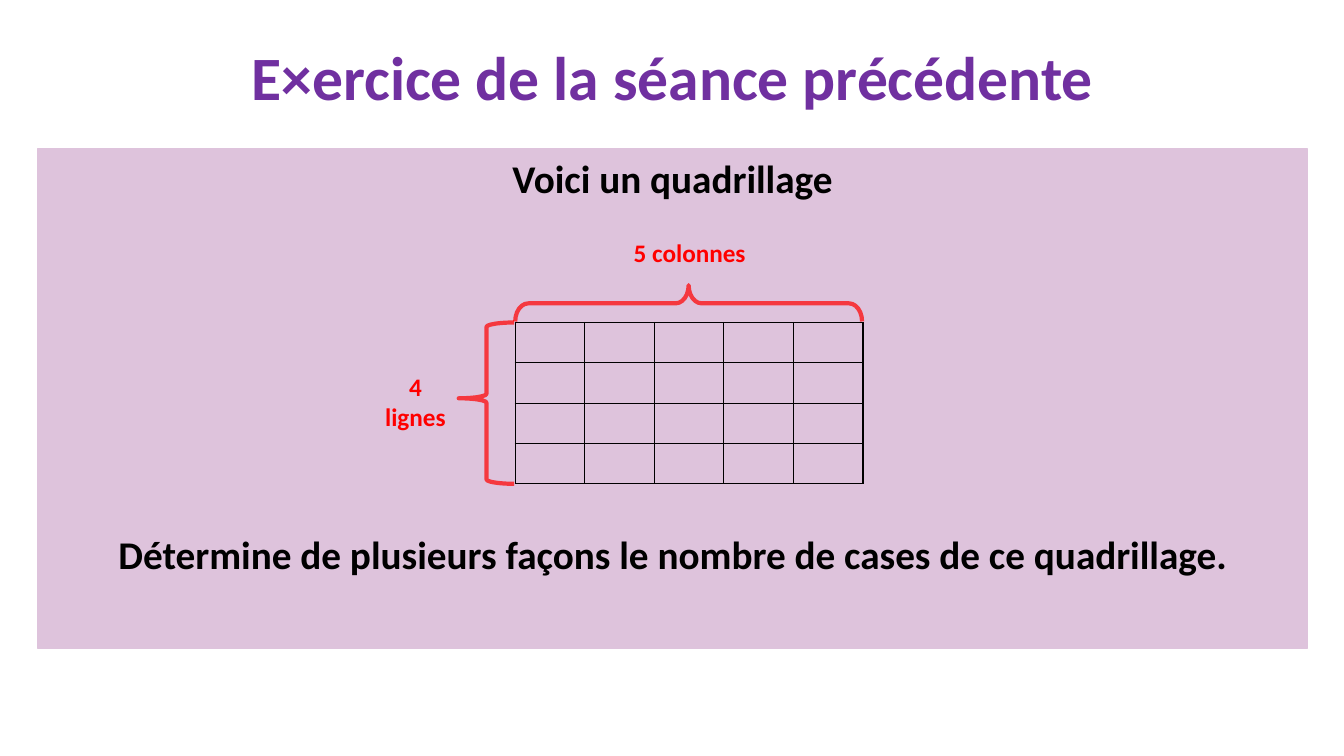
import dataclasses

import pptx
import pptx.dml.color
import pptx.enum.shapes
import pptx.enum.text
import pptx.oxml
import pptx.oxml.ns
import pptx.util

PX = 9144  # EMU in one px, 100 px to the inch
ANCHOR = pptx.enum.text.MSO_ANCHOR
SHAPE = pptx.enum.shapes.MSO_SHAPE


@dataclasses.dataclass(frozen=True)
class Theme:
    font: str = "Calibri"
    title: str = "7030A0"
    panel: str = "DEC3DC"
    ink: str = "000000"
    mark: str = "FF0000"
    alpha: int = 71000
    big: int = 44
    body: int = 28
    small: int = 18


THEME = Theme()


def scale(*sizes):
    return [size * PX for size in sizes]


def color(code):
    return pptx.dml.color.RGBColor.from_string(code)


def write(frame, text, size, ink, anchor=ANCHOR.TOP):
    """Fill a frame with bold, centred paragraphs."""
    frame.text = text
    frame.word_wrap = True
    frame.vertical_anchor = anchor
    for para in frame.paragraphs:
        para.alignment = pptx.enum.text.PP_ALIGN.CENTER
        for run in para.runs:
            run.font.name = THEME.font
            run.font.size = pptx.util.Pt(size)
            run.font.bold = True
            run.font.color.rgb = color(ink)


def add_label(slide, box, text, size, ink, anchor=ANCHOR.TOP):
    frame = slide.shapes.add_textbox(*scale(*box)).text_frame
    write(frame, text, size, ink, anchor)
    return frame


def add_panel(slide, box, text, gap):
    panel = slide.shapes.add_shape(SHAPE.RECTANGLE, *scale(*box))
    panel.shadow.inherit = False
    panel.fill.solid()
    panel.fill.fore_color.rgb = color(THEME.panel)
    panel.line.color.rgb = color(THEME.panel)
    panel.line.width = pptx.util.Pt(1)
    write(panel.text_frame, text, THEME.body, THEME.ink)
    panel.text_frame.paragraphs[-1].space_before = pptx.util.Pt(gap)


def add_brace(slide, box, curve, tip, turn=0):
    brace = slide.shapes.add_shape(SHAPE.LEFT_BRACE, *scale(*box))
    brace.shadow.inherit = False
    brace.rotation = turn
    brace.adjustments[0] = curve
    brace.adjustments[1] = tip
    brace.fill.background()
    brace.line.color.rgb = color(THEME.mark)
    brace.line.width = pptx.util.Pt(3)
    # Transparency of the line
    tint = brace.line.fill._xPr.find(".//" + pptx.oxml.ns.qn("a:srgbClr"))
    tint.append(pptx.oxml.parse_xml(
        f'<a:alpha {pptx.oxml.ns.nsdecls("a")} val="{THEME.alpha}"/>'))


def add_border(cell):
    props = cell._tc.get_or_add_tcPr()
    for place, side in enumerate("LRTB"):
        props.insert(place, pptx.oxml.parse_xml(
            f'<a:ln{side} {pptx.oxml.ns.nsdecls("a")} w="12700"><a:solidFill>'
            f'<a:srgbClr val="{THEME.ink}"/></a:solidFill></a:ln{side}>'))


def add_grid(slide, left, top, rows, cols, wide, high):
    box = scale(left, top, cols * wide, rows * high)
    table = slide.shapes.add_table(rows, cols, *box).table
    table.first_row = table.horz_banding = False
    for cell in table.iter_cells():
        cell.margin_top = cell.margin_bottom = 0
        cell.fill.background()
        add_border(cell)


def main():
    deck = pptx.Presentation()
    deck.slide_width, deck.slide_height = scale(1333, 750)
    slide = deck.slides.add_slide(deck.slide_layouts[6])

    # Title
    title = add_label(slide, (104, 7, 1127, 145),
                      "E×ercice de la séance précédente",
                      THEME.big, THEME.title, ANCHOR.MIDDLE)
    title.paragraphs[0].line_spacing = 0.9

    # Exercise panel
    add_panel(slide, (37, 148, 1260, 495),
              "Voici un quadrillage\nDétermine de plusieurs façons "
              "le nombre de cases de ce quadrillage.", 235)

    # Grid
    add_grid(slide, 511, 320, rows=4, cols=5, wide=69, high=40)

    # Counts and braces
    add_label(slide, (587, 231, 194, 40), "5 colonnes",
              THEME.small, THEME.mark)
    count = add_label(slide, (345, 363, 111, 71), "4\nlignes",
                      THEME.small, THEME.mark, ANCHOR.MIDDLE)
    count.margin_left = 33 * PX
    add_brace(slide, (455, 320, 55, 160), 0.08, 0.47)
    add_brace(slide, (665, 129, 36, 344), 0.36, 0.5, turn=90)

    deck.save("out.pptx")


if __name__ == "__main__":
    main()
